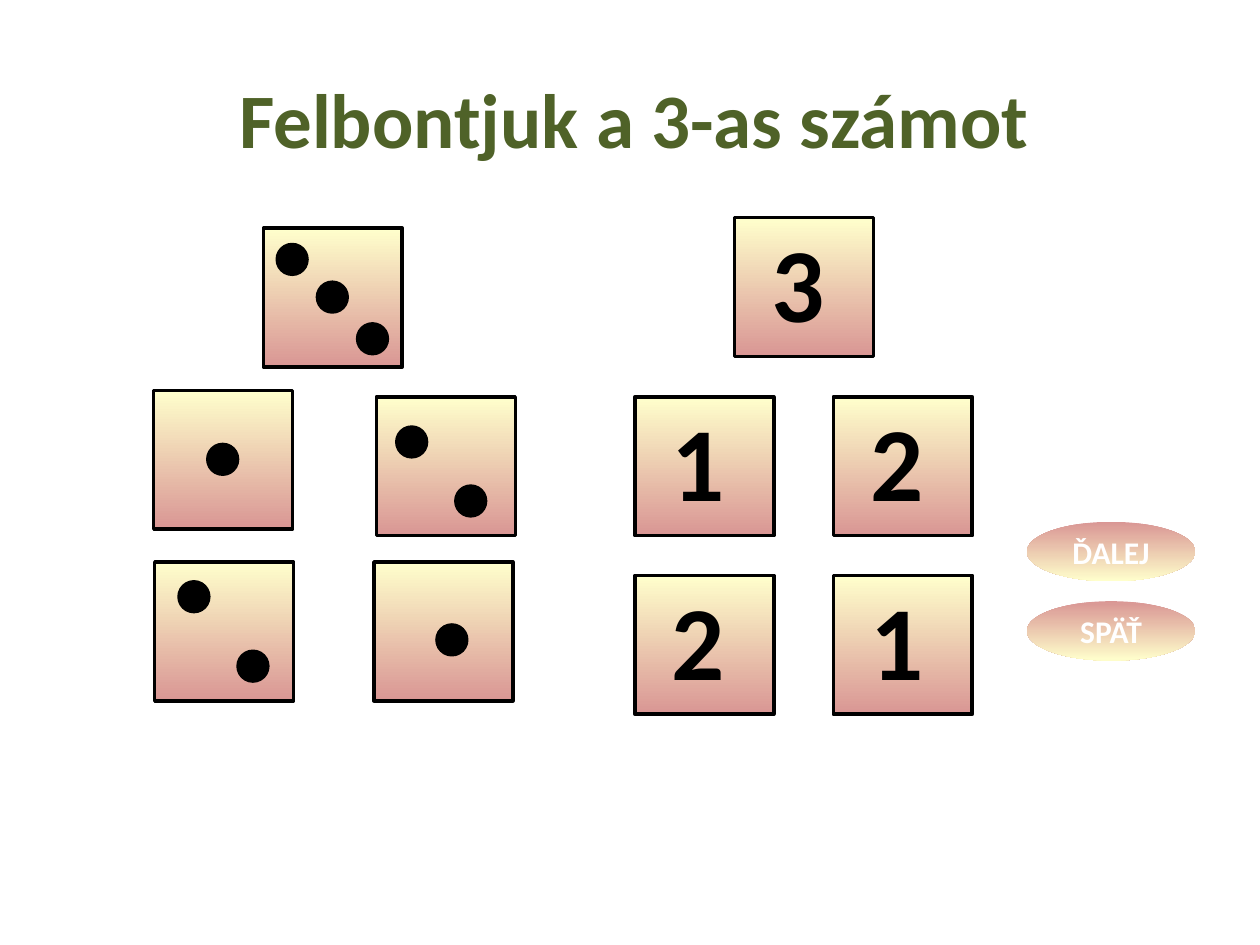
from pptx import Presentation
from pptx import util as u
from pptx.dml.color import RGBColor
from pptx.enum import shapes, text

COLORS = {
    "cream": "FFFFCC",
    "rose": "D99694",
    "black": "000000",
    "white": "FFFFFF",
    "green": "4F6228",
}
CARD, DOT = 2.8, 0.6
BUTTON_W, BUTTON_H = 3.4, 1.2


def rgb(name):
    return RGBColor.from_string(COLORS[name])


class Slide:
    """Holds the style and the current slide."""

    font = "Calibri"

    def __init__(self, prs):
        self.s = prs.slides.add_slide(prs.slide_layouts[6])

    def shape(self, kind, x, y, w, h, fill, line=None):
        sp = self.s.shapes.add_shape(kind, u.Cm(x), u.Cm(y), u.Cm(w), u.Cm(h))
        sp.shadow.inherit = False
        if isinstance(fill, tuple):
            sp.fill.gradient()
            sp.fill.gradient_angle = 270  # top to bottom
            for position, stop in enumerate(sp.fill.gradient_stops):
                stop.color.rgb = rgb(fill[position])
                stop.position = position
        else:
            sp.fill.solid()
            sp.fill.fore_color.rgb = rgb(fill)
        if line:
            sp.line.color.rgb = rgb(line)
            sp.line.width = u.Pt(2)
        else:
            sp.line.fill.background()
        return sp

    def label(self, sp, words, size, color, align, anchor):
        tf = sp.text_frame
        tf.text = words
        tf.word_wrap = True
        tf.vertical_anchor = anchor
        p = tf.paragraphs[0]
        p.alignment = align
        f = p.runs[0].font
        f.name, f.size, f.bold = self.font, u.Pt(size), True
        f.color.rgb = rgb(color)
        return tf

    def title(self, words, x, y, w, h):
        sp = self.s.shapes.add_textbox(u.Cm(x), u.Cm(y), u.Cm(w), u.Cm(h))
        self.label(sp, words, 44, "green", text.PP_ALIGN.CENTER, text.MSO_ANCHOR.TOP)

    def card(self, x, y):
        return self.shape(shapes.MSO_SHAPE.RECTANGLE, x, y, CARD, CARD,
                          ("cream", "rose"), "black")

    def die(self, x, y, dots):
        self.card(x, y)
        for dx, dy in dots:
            self.shape(shapes.MSO_SHAPE.OVAL, x + dx, y + dy, DOT, DOT,
                       "black", "black")

    def number(self, x, y, digit):
        tf = self.label(self.card(x, y), digit, 60, "black",
                        text.PP_ALIGN.LEFT, text.MSO_ANCHOR.MIDDLE)
        tf.margin_left = u.Cm(0.74)
        tf.paragraphs[0].line_spacing = 0.93

    def button(self, x, y, words):
        sp = self.shape(shapes.MSO_SHAPE.OVAL, x, y, BUTTON_W, BUTTON_H,
                        ("rose", "cream"))
        self.label(sp, words, 18, "white",
                   text.PP_ALIGN.CENTER, text.MSO_ANCHOR.MIDDLE)


def main():
    prs = Presentation()
    prs.slide_width, prs.slide_height = u.Cm(25.4), u.Cm(19.05)
    slide = Slide(prs)

    # Navigation buttons
    for i, words in enumerate(("ĎALEJ", "SPÄŤ")):
        slide.button(20.7, 10.52 + i * 1.6, words)

    slide.title("Felbontjuk a 3-as számot", 1.27, 1.32, 23.04, 2.62)

    # Dice: three dots, then its two splits; dots are offsets in the die
    slide.die(5.31, 4.6, [(0.28, 0.33), (1.09, 1.09), (1.9, 1.93)])
    slide.die(3.1, 7.87, [(1.09, 1.09)])
    slide.die(7.59, 8, [(0.41, 0.61), (1.6, 1.8)])
    slide.die(3.12, 11.33, [(0.49, 0.4), (1.68, 1.8)])
    slide.die(7.54, 11.33, [(1.27, 1.27)])

    # Number cards: the whole, then a grid of the splits
    slide.number(14.81, 4.39, "3")
    for row, pair in enumerate(("12", "21")):
        for col, digit in enumerate(pair):
            slide.number(12.8 + col * 4, 8 + row * 3.6, digit)

    prs.save("out.pptx")


if __name__ == "__main__":
    main()
